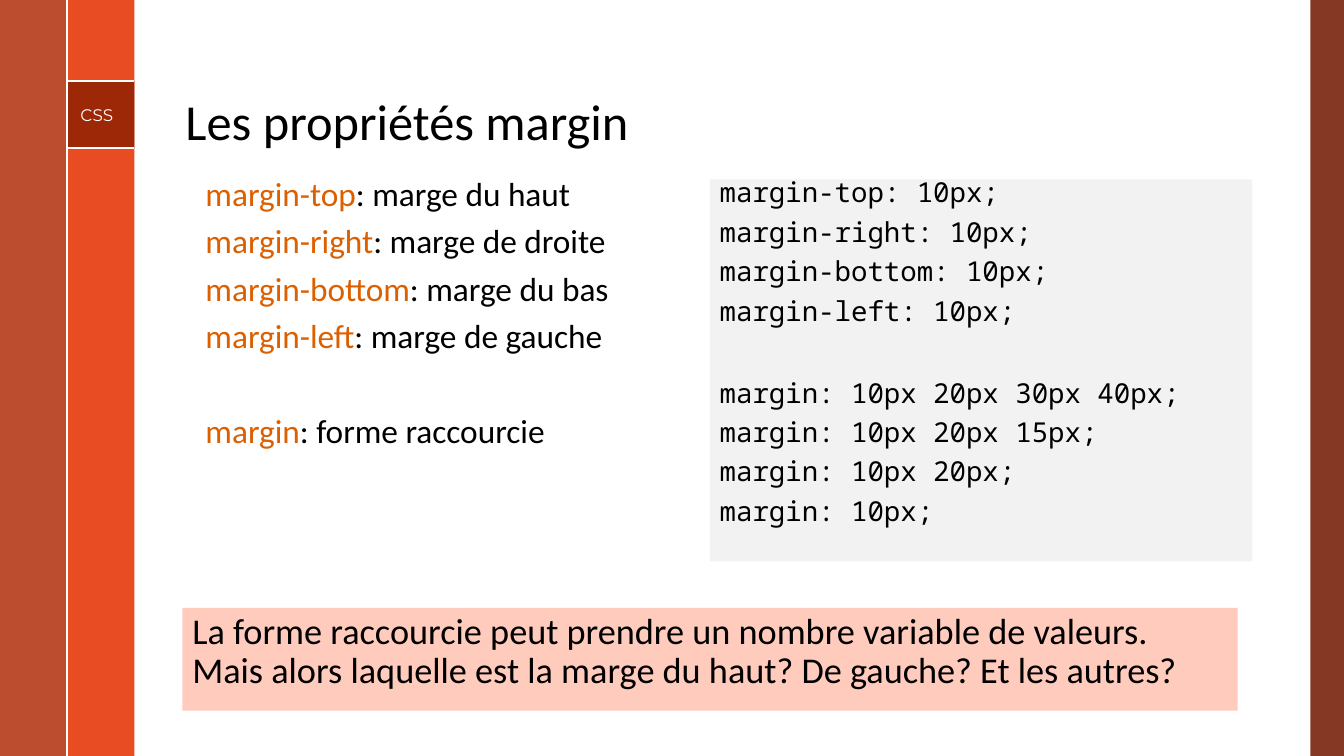
from lxml import etree
from pptx import Presentation
from pptx.dml.color import RGBColor
from pptx.enum import shapes as sh, text as tx
from pptx.oxml import ns
from pptx.util import Pt

# Colours
BLACK = RGBColor(0, 0, 0)
WHITE = RGBColor(0xFF, 0xFF, 0xFF)
BROWN = RGBColor(0x78, 0x23, 0x0D)
ORANGE = RGBColor(0xE8, 0x4C, 0x22)
RUST = RGBColor(0xB5, 0x35, 0x13)
DARK = RGBColor(0x85, 0x1D, 0x00)
KEY = RGBColor(0xDC, 0x5F, 0x00)
GREY = RGBColor(0xF2, 0xF2, 0xF2)
PINK = RGBColor(0xFF, 0xCB, 0xBD)

# Content: each list is split into groups, set apart by a line's height
TITLE = "Les propriétés margin"
TAG = "CSS"
PROPS = [
    [("margin-top", ": marge du haut"),
     ("margin-right", ": marge de droite"),
     ("margin-bottom", ": marge du bas"),
     ("margin-left", ": marge de gauche")],
    [("margin", ": forme raccourcie")],
]
CODE = [
    ["margin-top: 10px;", "margin-right: 10px;",
     "margin-bottom: 10px;", "margin-left: 10px;"],
    ["margin: 10px 20px 30px 40px;", "margin: 10px 20px 15px;",
     "margin: 10px 20px;", "margin: 10px;"],
]
NOTE = ["La forme raccourcie peut prendre un nombre variable de valeurs.",
        "Mais alors laquelle est la marge du haut? De gauche? Et les autres?"]

# Frame, in points
WIDE, HIGH = 960, 540
BAND = 48
TOP, LOW = 58, 106
BANDS = [  # left, top, width, height, colour, opacity
    (WIDE - BAND / 2, 0, BAND / 2, HIGH, BROWN, 90),
    (BAND, 0, BAND, HIGH, ORANGE, 100),
    (0, 0, BAND, HIGH, RUST, 88),
    (BAND, TOP, BAND, LOW - TOP, DARK, 75),
]
RULES = [(BAND, TOP, 2 * BAND, TOP), (BAND, LOW, 2 * BAND, LOW),
         (BAND, 0, BAND, HIGH)]

deck = Presentation()
deck.slide_width, deck.slide_height = Pt(WIDE), Pt(HIGH)
slide = deck.slides.add_slide(deck.slide_layouts[5])
items = slide.shapes


def block(x, y, w, h, color, alpha=100):
    box = items.add_shape(sh.MSO_SHAPE.RECTANGLE, Pt(x), Pt(y), Pt(w), Pt(h))
    box.shadow.inherit = False
    box.fill.solid()
    box.fill.fore_color.rgb = color
    box.line.fill.background()
    if alpha < 100:
        tint = box.fill._xPr.find(".//" + ns.qn("a:srgbClr"))
        etree.SubElement(tint, ns.qn("a:alpha"), val=str(alpha * 1000))
    return box


def label(x, y, w, h):
    return items.add_textbox(Pt(x), Pt(y), Pt(w), Pt(h))


def frame(box, anchor=tx.MSO_ANCHOR.TOP):
    body = box.text_frame
    body.word_wrap = True
    body.vertical_anchor = anchor
    return body


def add(para, words, font, size, color):
    run = para.add_run()
    run.text = words
    run.font.name = font
    run.font.size = Pt(size)
    run.font.color.rgb = color


def stack(body, groups, font, size, gap, pitch):
    """Write groups of lines; a new group starts one pitch lower."""
    first = True
    for group in groups:
        for i, line in enumerate(group):
            para = body.paragraphs[0] if first else body.add_paragraph()
            para.alignment = tx.PP_ALIGN.LEFT
            para.line_spacing = 0.7
            if not first:
                para.space_before = Pt(gap if i else gap + pitch)
            first = False
            for words, color in line:
                add(para, words, font, size, color)


# Side bands and rules
for band in BANDS:
    block(*band)
for ends in RULES:
    rule = items.add_connector(sh.MSO_CONNECTOR.STRAIGHT, *map(Pt, ends))
    rule.line.color.rgb = WHITE
    rule.line.width = Pt(1.5)
    etree.SubElement(rule._element.spPr, ns.qn("a:effectLst"))

# Section tag
tag = frame(label(50.4, 71.3, 46, 22))
add(tag.paragraphs[0], TAG, "Montserrat", 12, WHITE)

# Title
head = items.title
head.left, head.top, head.width, head.height = map(Pt, (125.3, 13.7, 770, 98))
para = frame(head, tx.MSO_ANCHOR.BOTTOM).paragraphs[0]
para.alignment = tx.PP_ALIGN.LEFT
para.line_spacing = 0.9
add(para, TITLE, "Calibri", 36, BLACK)

# Code panel
lines = [[[(line, BLACK)] for line in group] for group in CODE]
stack(frame(block(507, 128.2, 387.5, 272.8, GREY)), lines,
      "Noto Sans Mono", 19.6, 11.7, 30.4)

# Property list
lines = [[[(key, KEY), (rest, BLACK)] for key, rest in group]
         for group in PROPS]
stack(frame(label(139.7, 128.2, 306, 210)), lines, "Calibri", 23.8, 13.7, 34)

# Closing question
para = frame(block(130.3, 434.2, 753.8, 73.4, PINK)).paragraphs[0]
para.alignment = tx.PP_ALIGN.LEFT
para.line_spacing = 0.9
for i, line in enumerate(NOTE):
    if i:
        para.add_line_break()
    add(para, line, "Calibri", 25.9, BLACK)

deck.save("out.pptx")
